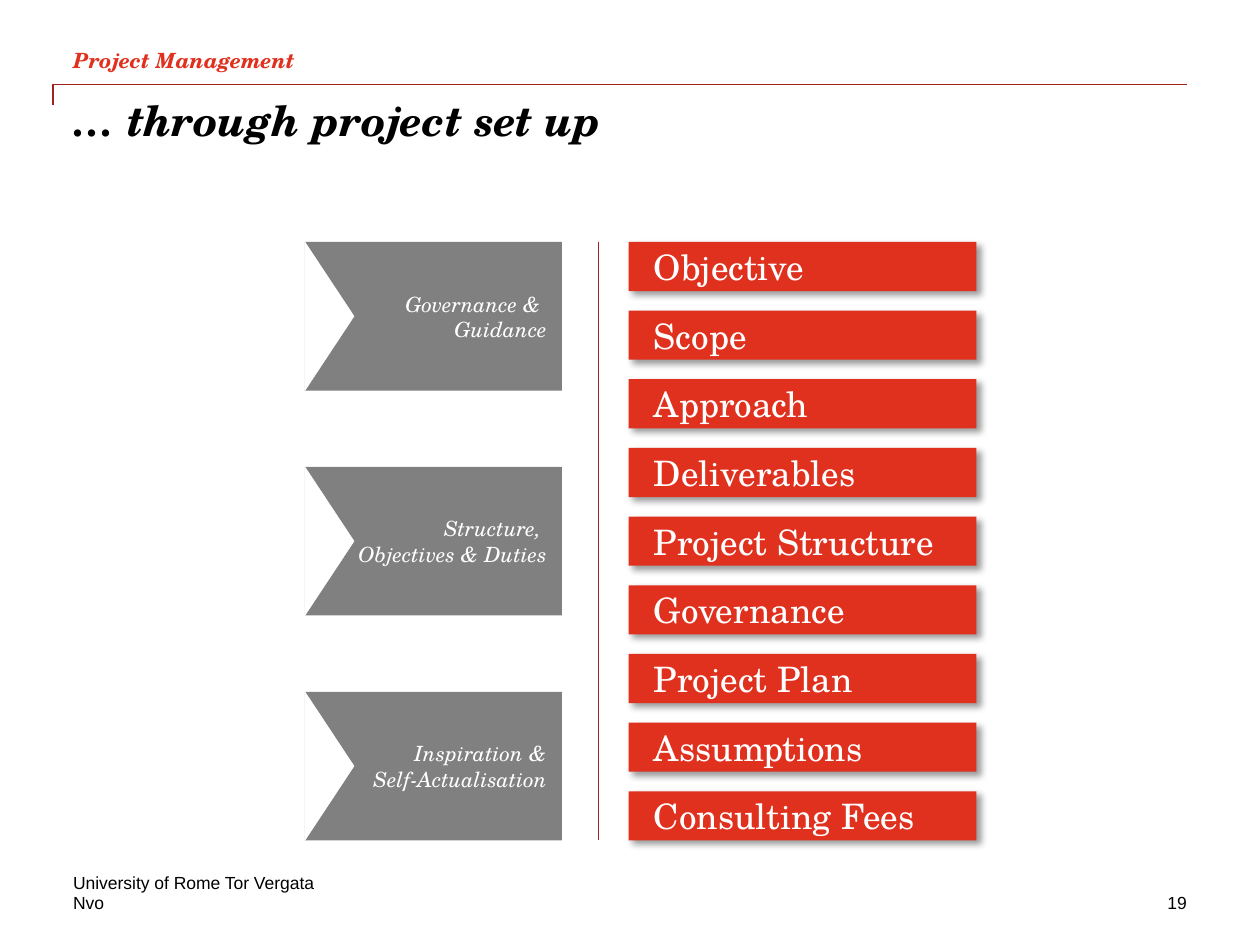
from lxml.etree import SubElement
from pptx import Presentation
from pptx.dml.color import RGBColor
from pptx.enum.shapes import MSO_CONNECTOR, MSO_SHAPE
from pptx.enum.text import MSO_ANCHOR, MSO_AUTO_SIZE, PP_ALIGN
from pptx.oxml.ns import qn
from pptx.util import Inches, Pt

RED = RGBColor(0xE0, 0x30, 0x1E)
RULE_RED = RGBColor(0xA3, 0x20, 0x20)
GRAY = RGBColor(0x80, 0x80, 0x80)
BLACK = RGBColor(0, 0, 0)
WHITE = RGBColor(0xFF, 0xFF, 0xFF)
SERIF = "TeX Gyre Schola"
SANS = "Arial"

THEMES = [
    ["Governance & ", "Guidance"],
    ["Structure, ", "Objectives & Duties"],
    ["Inspiration &", "Self-Actualisation"],
]
TOPICS = [
    "Objective", "Scope", "Approach", "Deliverables", "Project Structure",
    "Governance", "Project Plan", "Assumptions", "Consulting Fees",
]


def set_text(shape, lines, size, color, font=SERIF, bold=False, italic=False,
             align=PP_ALIGN.LEFT, anchor=MSO_ANCHOR.TOP, left=0, right=0):
    frame = shape.text_frame
    frame.text = "\n".join(lines)
    frame.word_wrap = True
    frame.auto_size = MSO_AUTO_SIZE.NONE
    frame.vertical_anchor = anchor
    frame.margin_left, frame.margin_right = Inches(left), Inches(right)
    frame.margin_top = frame.margin_bottom = 0
    for paragraph in frame.paragraphs:
        paragraph.alignment = align
        for run in paragraph.runs:
            run.font.name, run.font.size = font, Pt(size)
            run.font.bold, run.font.italic = bold, italic
            run.font.color.rgb = color


def add_text(slide, box, text, size, color, **style):
    shape = slide.shapes.add_textbox(*map(Inches, box))
    set_text(shape, [text], size, color, **style)


def add_block(slide, kind, box, fill):
    shape = slide.shapes.add_shape(kind, *map(Inches, box))
    shape.shadow.inherit = False
    shape.fill.solid()
    shape.fill.fore_color.rgb = fill
    shape.line.fill.background()
    return shape


def add_drop_shadow(shape):
    effects = shape._element.spPr.find(qn("a:effectLst"))
    shadow = SubElement(effects, qn("a:outerShdw"), blurRad=str(Pt(4)),
                        dist=str(Pt(3)), dir=str(45 * 60000), algn="tl", rotWithShape="0")
    color = SubElement(shadow, qn("a:srgbClr"), val="000000")
    SubElement(color, qn("a:alpha"), val="40000")


def spread(top, height, item_height, count):
    """Tops of equally spaced items that fill the given height."""
    pitch = (height - item_height) / (count - 1)
    return [top + index * pitch for index in range(count)]


def add_header(slide, left, top, width):
    # Section name
    add_text(slide, (left, top, width, 0.25), "Project Management", 12, RED,
             bold=True, italic=True, anchor=MSO_ANCHOR.BOTTOM)
    # Rule with a short drop at its left end
    rule_left, rule_top = left - 0.16, top + 0.34
    builder = slide.shapes.build_freeform(Inches(rule_left), Inches(rule_top + 0.16))
    builder.add_line_segments([
        (Inches(rule_left), Inches(rule_top)),
        (Inches(left + width + 0.01), Inches(rule_top)),
    ], close=False)
    rule = builder.convert_to_shape()
    rule.shadow.inherit = False
    rule.fill.background()
    rule.line.color.rgb = RULE_RED
    rule.line.width = Pt(1)
    # Title
    title = slide.shapes.title
    title.left, title.top = Inches(left), Inches(top + 0.42)
    title.width, title.height = Inches(width), Inches(1)
    set_text(title, ["… through project set up"], 24, BLACK, bold=True, italic=True)


def add_themes(slide, left, top, width, height):
    block_height, notch = 1.18, 0.39
    for lines, y in zip(THEMES, spread(top, height, block_height, len(THEMES))):
        block = add_block(slide, MSO_SHAPE.RECTANGLE, (left, y, width, block_height), GRAY)
        set_text(block, lines, 12, WHITE, italic=True, align=PP_ALIGN.RIGHT,
                 anchor=MSO_ANCHOR.MIDDLE, right=0.12)
        # White notch: a triangle turned to point right
        offset = (block_height - notch) / 2
        triangle = add_block(slide, MSO_SHAPE.ISOSCELES_TRIANGLE,
                             (left - offset, y + offset, block_height, notch), WHITE)
        triangle.rotation = 90
        triangle.line.color.rgb = WHITE
        triangle.line.width = Pt(0.25)


def add_divider(slide, x, top, height):
    line = slide.shapes.add_connector(MSO_CONNECTOR.STRAIGHT, Inches(x), Inches(top),
                                      Inches(x), Inches(top + height))
    line.line.color.rgb = RULE_RED
    line.line.width = Pt(0.75)
    SubElement(line._element.spPr, qn("a:effectLst"))


def add_topics(slide, left, top, width, height):
    bar_height = 0.39
    for topic, y in zip(TOPICS, spread(top, height, bar_height, len(TOPICS))):
        bar = add_block(slide, MSO_SHAPE.RECTANGLE, (left, y, width, bar_height), RED)
        add_drop_shadow(bar)
        set_text(bar, [topic], 20, WHITE, anchor=MSO_ANCHOR.MIDDLE, left=0.2, right=0.08)


def add_footer(slide, left, top, width):
    add_text(slide, (left, top, 5.75, 0.17), "University of Rome Tor Vergata", 10, BLACK,
             font=SANS, anchor=MSO_ANCHOR.BOTTOM)
    add_text(slide, (left, top + 0.16, 2.83, 0.17), "Nvo", 10, BLACK, font=SANS)
    add_text(slide, (left + width - 1.67, top + 0.16, 1.67, 0.17), "19", 10, BLACK,
             font=SANS, align=PP_ALIGN.RIGHT)


def main():
    presentation = Presentation()
    presentation.slide_width, presentation.slide_height = Inches(10), Inches(7.5)
    slide = presentation.slides.add_slide(presentation.slide_layouts.get_by_name("Title Only"))
    content_top, content_height = 1.92, 4.75
    add_header(slide, 0.58, 0.33, 8.83)
    add_themes(slide, 2.42, content_top, 2.04, content_height)
    add_divider(slide, 4.75, content_top, content_height)
    add_topics(slide, 4.99, content_top, 2.76, content_height)
    add_footer(slide, 0.58, 6.92, 8.84)
    presentation.save("out.pptx")


if __name__ == "__main__":
    main()
